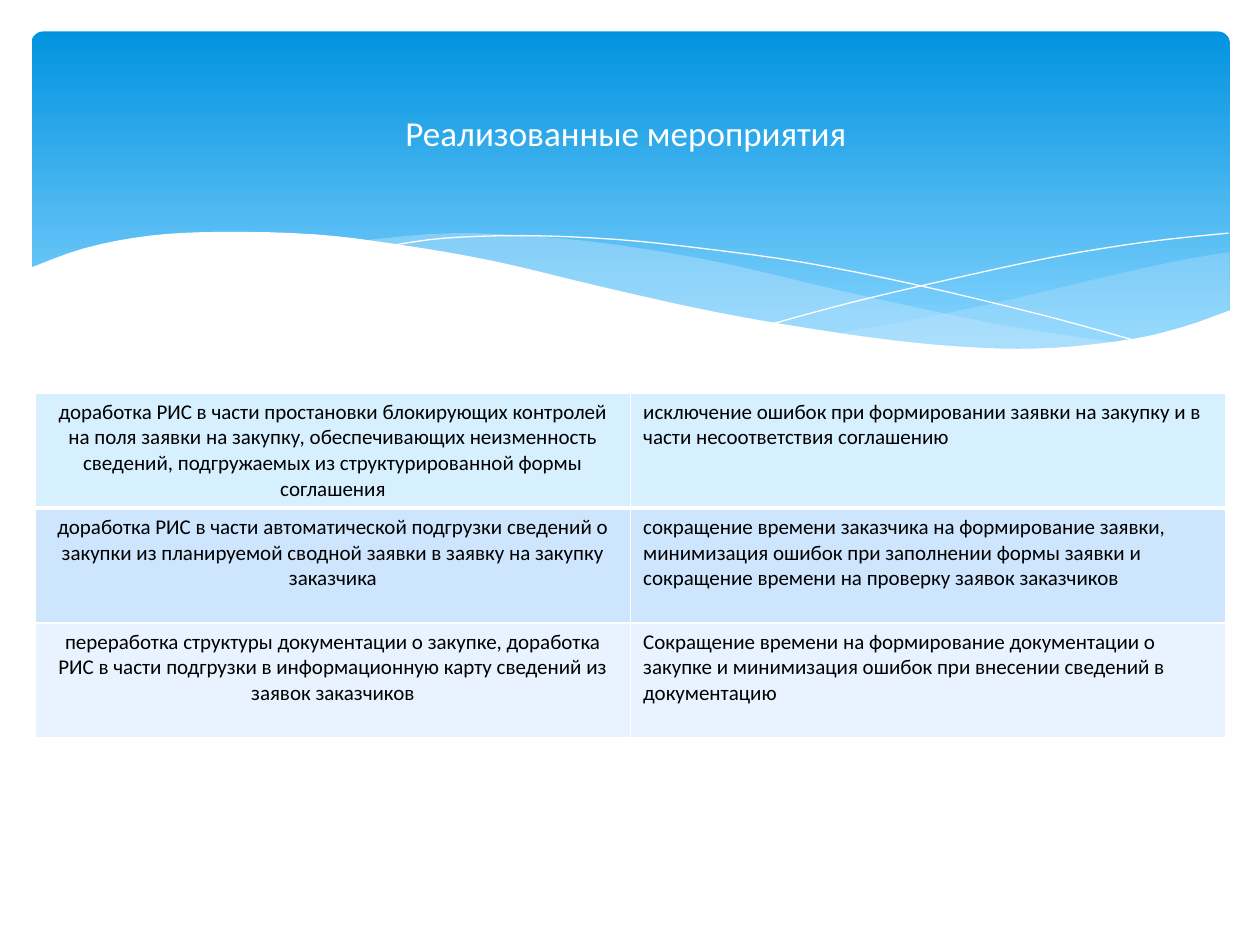
from pptx import Presentation
from pptx.dml.color import RGBColor
from pptx.enum.shapes import MSO_SHAPE as Shape
from pptx.enum.text import MSO_ANCHOR as Anchor, PP_ALIGN as Align
from pptx.oxml import parse_xml
from pptx.oxml.ns import nsdecls
from pptx.util import Inches, Pt


def paint(color):
    return RGBColor.from_string(color)


def wave(keys, tail=(), fill=None, alpha=100):
    """Draw a smooth curve through the keys, closed by straight tail points."""
    pts = [keys[0]]
    ends = [keys[0], *keys, keys[-1]]
    for a, b, c, d in zip(ends, ends[1:], ends[2:], ends[3:]):
        for t in (0.25, 0.5, 0.75, 1):
            pts.append(tuple(
                (2 * q + (r - p) * t + (2 * p - 5 * q + 4 * r - s) * t ** 2
                 + (3 * q - p - 3 * r + s) * t ** 3) / 2
                for p, q, r, s in zip(a, b, c, d)))
    pts = [(Inches(x), Inches(y)) for x, y in [*pts, *tail]]
    pen = shapes.build_freeform(*pts[0], scale=1)
    pen.add_line_segments(pts[1:], close=bool(tail))
    shape = pen.convert_to_shape()
    shape.shadow.inherit = False
    if fill is None:
        shape.fill.background()
        shape.line.color.rgb = paint("FFFFFF")
        shape.line.width = Pt(0)
        return
    shape.line.fill.background()
    shape.fill.solid()
    shape.fill.fore_color.rgb = paint(fill)
    if alpha < 100:
        tint = shape._element.spPr.find(".//" + "{http://schemas.openxmlformats.org/drawingml/2006/main}srgbClr")
        tint.append(parse_xml(f'<a:alpha {nsdecls("a")} val="{alpha * 1000}"/>'))


deck = Presentation()
deck.slide_width, deck.slide_height = Inches(10), Inches(7.5)
slide = deck.slides.add_slide(deck.slide_layouts[5])
shapes = slide.shapes

# Header panel
panel = shapes.add_shape(Shape.ROUNDED_RECTANGLE, Inches(0.25), Inches(0.25),
                         Inches(9.51), Inches(2.7))
panel.adjustments[0] = 0.034
panel.shadow.inherit = False
panel.line.fill.background()
panel.fill.gradient()
panel.fill.gradient_angle = 270
for stop, (pos, color) in zip(panel.fill.gradient_stops,
                              [(0, "0293E0"), (0.9, "83D3FE")]):
    stop.position = pos
    stop.color.rgb = paint(color)

# Pale waves
wave([(6.61, 2.65), (7.29, 2.53), (8.05, 2.37), (8.76, 2.2), (9.35, 2.07), (9.76, 2)],
     [(9.76, 2.47), (9, 2.71), (8.1, 2.78), (7.3, 2.74)], "C6E7FC", 29)
wave([(2.86, 1.91), (3.61, 1.85), (4.42, 1.89), (5.14, 1.98), (5.84, 2.11),
      (6.68, 2.31), (7.41, 2.47), (8.07, 2.6), (8.93, 2.73)],
     [(8.1, 2.78), (7.3, 2.74), (6.5, 2.64), (5.5, 2.45), (4.49, 2.22)], "C6E7FC", 40)

# Thin lines
wave([(3.09, 1.95), (3.53, 1.89), (4.16, 1.87), (4.89, 1.9), (5.56, 1.97),
      (6.36, 2.08), (7.27, 2.26), (8.31, 2.51), (9.07, 2.72)])
wave([(6.13, 2.57), (6.72, 2.41), (7.48, 2.23), (8.36, 2.04), (9.1, 1.92), (9.75, 1.85)])

# White front wave
wave([(0.23, 2.13), (0.67, 1.97), (1.19, 1.87), (1.77, 1.84), (2.5, 1.86),
      (3.16, 1.94), (3.91, 2.07), (4.75, 2.27), (5.55, 2.45), (6.26, 2.58),
      (7.08, 2.7), (7.78, 2.76), (8.37, 2.76), (8.99, 2.69), (9.4, 2.59), (9.77, 2.46)],
     [(9.77, 3.29), (0.23, 3.29)], "FFFFFF")

# Title, brought in front of the header
title = shapes.title
shapes._spTree.append(title._element)
place = {"left": 0.5, "top": 0.37, "width": 9, "height": 1.37}
for key, val in place.items():
    setattr(title, key, Inches(val))
title.text_frame.text = "Реализованные мероприятия "
title.text_frame.vertical_anchor = Anchor.MIDDLE
line = title.text_frame.paragraphs[0]
line.alignment = Align.CENTER
for key, val in {"name": "Calibri", "size": Pt(20)}.items():
    setattr(line.runs[0].font, key, val)
line.runs[0].font.color.rgb = paint("FFFFFF")

# Table of measures and effects
rows = [
    ("D6F0FF",
     "доработка РИС в части простановки блокирующих контролей на поля заявки на закупку, "
     "обеспечивающих неизменность сведений, подгружаемых из структурированной формы соглашения",
     "исключение ошибок при формировании заявки на закупку и в части несоответствия соглашению"),
    ("CEE5FE",
     "доработка РИС в части автоматической подгрузки сведений о закупки из планируемой "
     "сводной заявки в заявку на закупку заказчика",
     "сокращение времени заказчика на формирование заявки, минимизация ошибок при заполнении "
     "формы заявки и сокращение времени на проверку заявок заказчиков"),
    ("E8F3FF",
     "переработка структуры документации о закупке, доработка РИС в части подгрузки "
     "в информационную карту сведений из заявок заказчиков",
     "Сокращение времени на формирование документации о закупке и минимизация ошибок "
     "при внесении сведений в документацию"),
]
table = shapes.add_table(len(rows), 2, Inches(0.28), Inches(3.12),
                         Inches(9.45), Inches(0.91 * len(rows))).table
for key in ("first_row", "horz_banding"):
    setattr(table, key, False)
for i, (color, *texts) in enumerate(rows):
    for j, text in enumerate(texts):
        cell = table.cell(i, j)
        cell.text = text
        para = cell.text_frame.paragraphs[0]
        para.alignment = (Align.CENTER, Align.LEFT)[j]
        for key, val in {"name": "Calibri", "size": Pt(12), "bold": False}.items():
            setattr(para.runs[0].font, key, val)
        para.runs[0].font.color.rgb = paint("000000")
        # Borders come before the fill; the first row has a thick lower edge
        thick = {"L": 1, "R": 1, "T": 3 if i == 1 else 1, "B": 3 if i == 0 else 1}
        for side, width in thick.items():
            cell._tc.get_or_add_tcPr().append(parse_xml(
                f'<a:ln{side} {nsdecls("a")} w="{Pt(width)}"><a:solidFill>'
                f'<a:srgbClr val="FFFFFF"/></a:solidFill></a:ln{side}>'))
        cell.fill.solid()
        cell.fill.fore_color.rgb = paint(color)

deck.save("out.pptx")
